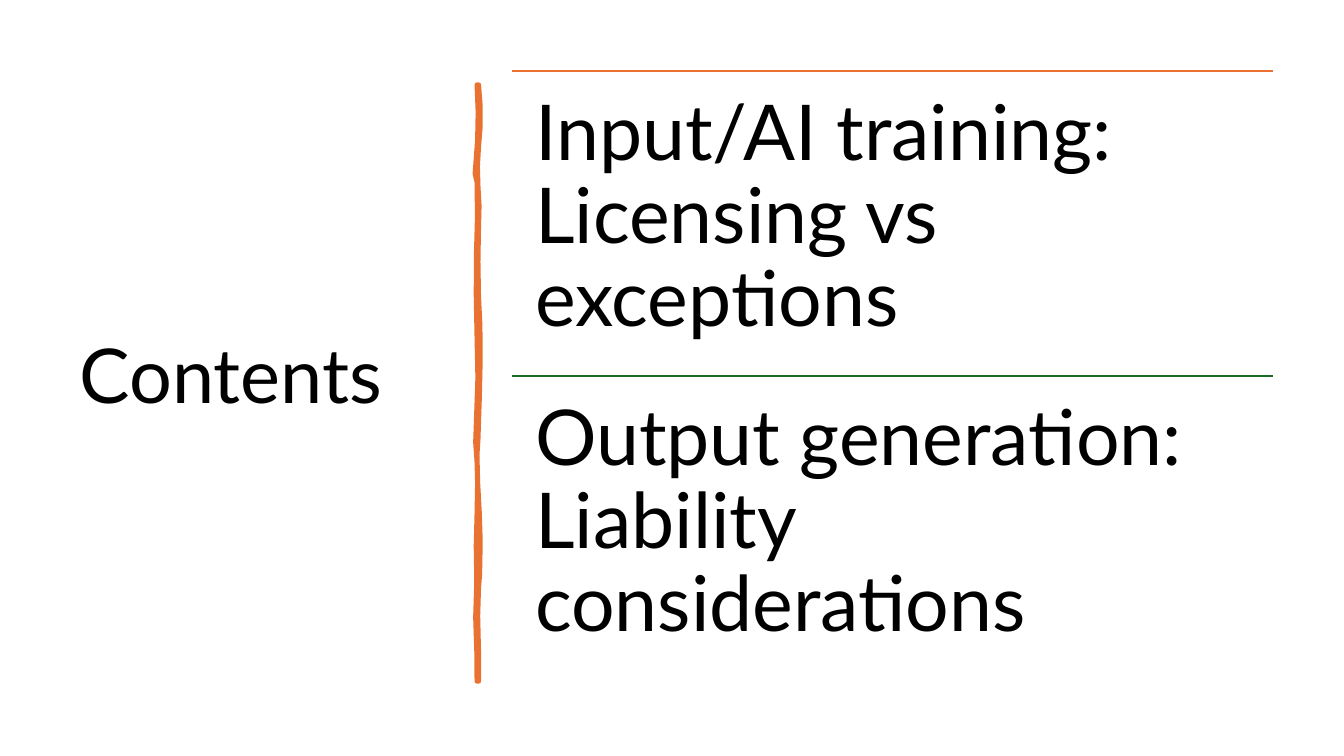
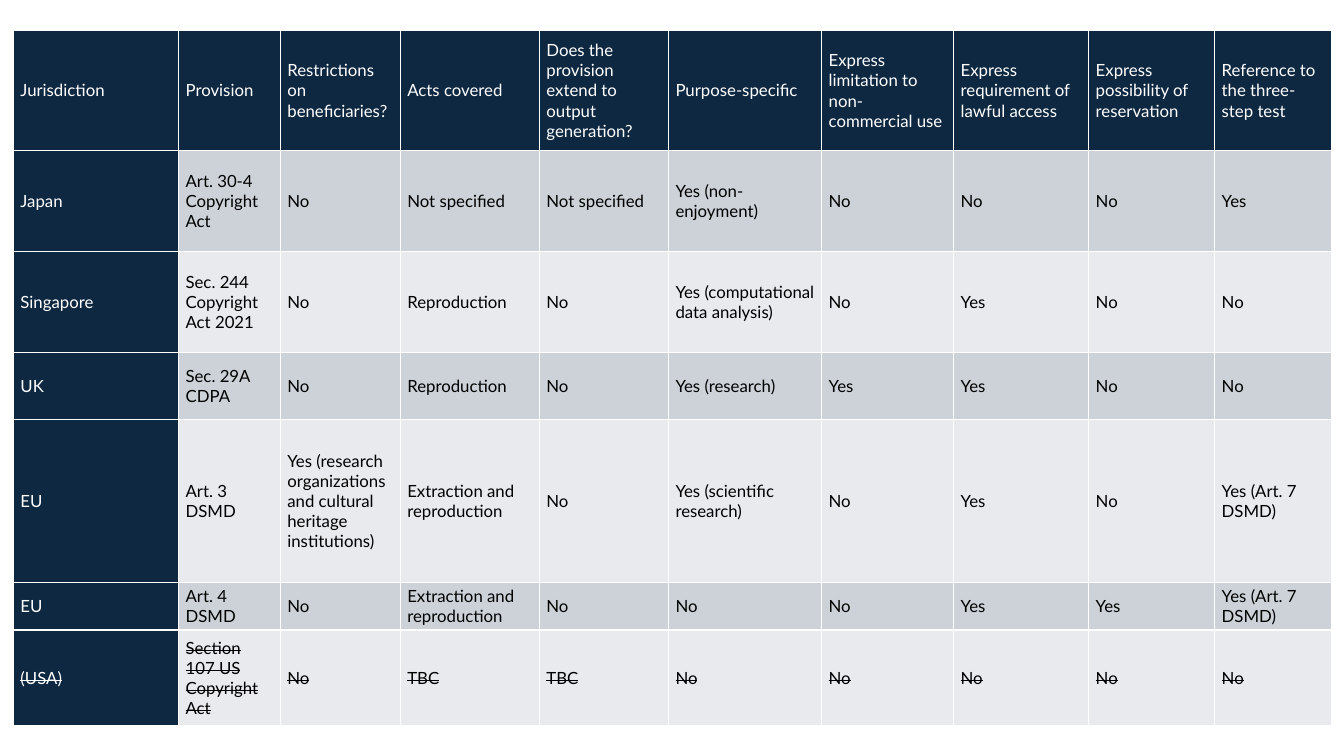
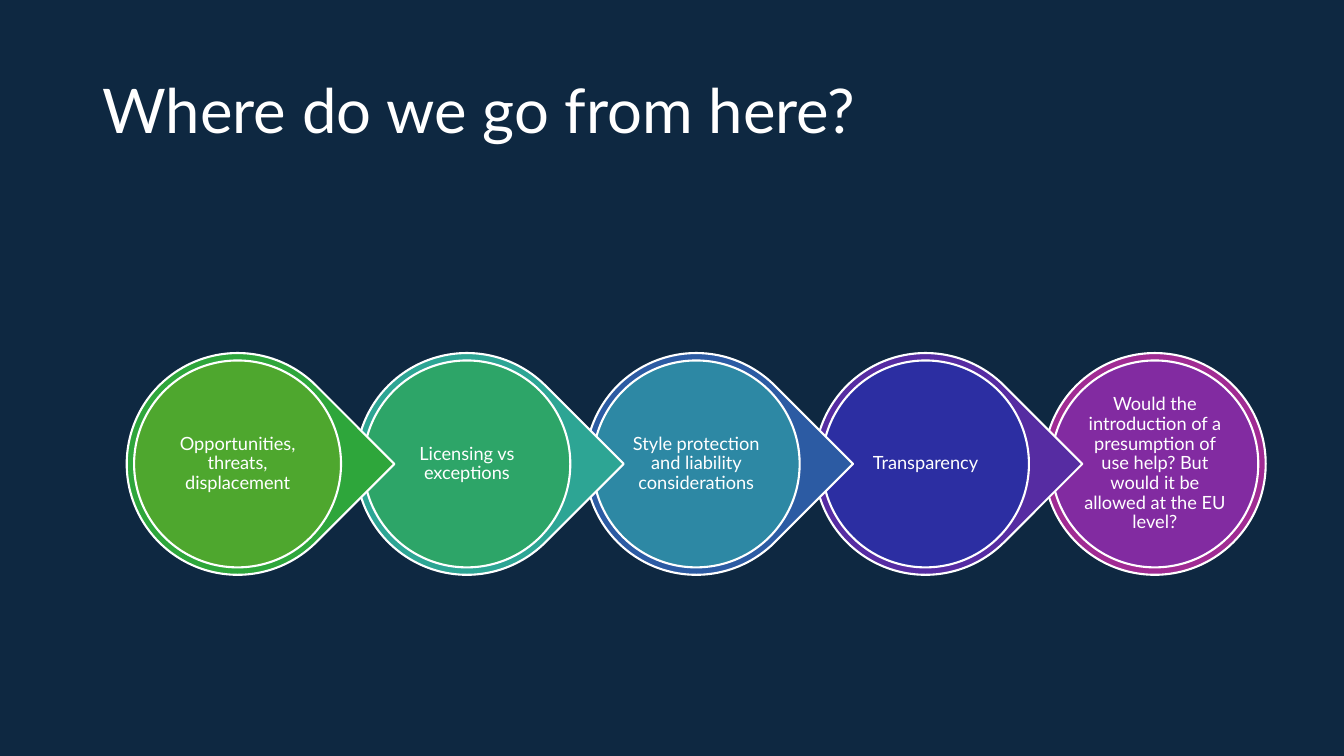
from lxml import etree
from pptx import Presentation
from pptx.dml.color import RGBColor
from pptx.enum.shapes import MSO_CONNECTOR, MSO_SHAPE
from pptx.enum.text import MSO_ANCHOR, MSO_AUTO_SIZE, PP_ALIGN
from pptx.oxml.ns import qn
from pptx.util import Pt

LINE = MSO_CONNECTOR.STRAIGHT
OVAL, DROP = MSO_SHAPE.OVAL, MSO_SHAPE.TEAR
TOP, MID = MSO_ANCHOR.TOP, MSO_ANCHOR.MIDDLE
LEFT, MIDDLE = PP_ALIGN.LEFT, PP_ALIGN.CENTER
FIXED = MSO_AUTO_SIZE.NONE

FONT = "Lato"
WHITE, BLACK, NAVY = "FFFFFF", "000000", "0E2841"
ORANGE, GREEN = "E97132", "196B24"
BANDS = ("CCD2D8", "E8EAED")
TITLE_ONLY, BLANK = 5, 6

# Outline of the brush stroke: (x, y) down the right edge, then up the left
STROKE = [
    (342, 60.5), (343.2, 76), (343.2, 90), (342, 105), (341.2, 119),
    (341.6, 133), (342.4, 147), (342, 162), (341.6, 187), (342, 212),
    (343, 232), (343.2, 256), (342.6, 284), (341.6, 314), (340.9, 325),
    (341.4, 345), (342.6, 367), (343.2, 387), (342.8, 410), (342, 420),
    (341.4, 440), (342, 465), (342, 486.7), (340.6, 486.7), (340.4, 465),
    (339.6, 441), (340.4, 415), (340, 390), (340.6, 367), (341, 345),
    (340.6, 330), (339.6, 316), (340.2, 299), (341.2, 270), (340.6, 241),
    (340, 210), (340.2, 180), (340.9, 155), (340.6, 130), (339.2, 124),
    (341, 100), (341.4, 80), (340.6, 60.5),
]

TOPICS = [
    ("Input/AI training: Licensing vs exceptions", ORANGE),
    ("Output generation: Liability considerations", GREEN),
]

COLS = [118, 72.7, 85.7, 99.4, 92.2, 109.4, 94.3, 96.5, 90, 83.5]
ROWS = [86, 72, 72, 48, 116.5, 34, 68.5]
LAWS = [line.split("|") for line in (
    "Jurisdiction|Provision|Restrictions on beneficiaries?|Acts covered|"
    "Does the provision extend to output generation?|Purpose-specific|"
    "Express limitation to non-commercial use|"
    "Express requirement of lawful access|"
    "Express possibility of reservation|Reference to the three-step test",
    "Japan|Art. 30-4 Copyright Act|No|Not specified|Not specified|"
    "Yes (non-enjoyment)|No|No|No|Yes",
    "Singapore|Sec. 244 Copyright Act 2021|No|Reproduction|No|"
    "Yes (computational data analysis)|No|Yes|No|No",
    "UK|Sec. 29A CDPA|No|Reproduction|No|Yes (research)|Yes|Yes|No|No",
    "EU|Art. 3 DSMD|"
    "Yes (research organizations and cultural heritage institutions)|"
    "Extraction and reproduction|No|Yes (scientific research)|"
    "No|Yes|No|Yes (Art. 7 DSMD)",
    "EU|Art. 4 DSMD|No|Extraction and reproduction|No|No|No|Yes|Yes|"
    "Yes (Art. 7 DSMD)",
    "(USA)|Section 107 US Copyright Act|No|TBC|TBC|No|No|No|No|No",
)]

STEPS = [
    ("Opportunities, threats, displacement", "2EA63B", "4EA72E"),
    ("Licensing vs exceptions", "2DA594", "2DA568"),
    ("Style protection and liability considerations", "2C5BA3", "2D88A4"),
    ("Transparency", "562CA2", "2C2EA2"),
    ("Would the introduction of a presumption of use help? "
     "But would it be allowed at the EU level?", "A02B93", "822BA1"),
]


def color(code):
    return RGBColor.from_string(code)


def apply(item, values):
    for name, value in values.items():
        setattr(item, name, value)


class Deck:
    def __init__(self):
        self.prs = Presentation()
        apply(self.prs, {"slide_width": Pt(960), "slide_height": Pt(540)})

    def add(self, layout, back=WHITE):
        self.slide = self.prs.slides.add_slide(self.prs.slide_layouts[layout])
        self.paint(self.slide.background, back)

    def paint(self, item, code):
        item.fill.solid()
        item.fill.fore_color.rgb = color(code)

    def edge(self, item, code, width):
        item.line.color.rgb = color(code)
        item.line.width = Pt(width)

    def label(self, frame, text, size, ink, align=LEFT, space=None):
        para = frame.paragraphs[0]
        apply(para, {"alignment": align, "line_spacing": space})
        run = para.add_run()
        run.text = text
        apply(run.font, {"name": FONT, "size": Pt(size)})
        run.font.color.rgb = color(ink)
        return run

    def title(self, text, box, size, ink):
        shape = self.slide.shapes.title
        apply(shape, dict(zip(("left", "top", "width", "height"),
                              map(Pt, box))))
        apply(shape.text_frame, {"vertical_anchor": MID, "word_wrap": True,
                                 "auto_size": FIXED})
        self.label(shape.text_frame, text, size, ink, space=0.9)

    def text(self, text, box, size, ink, inset, anchor=TOP, align=LEFT):
        frame = self.slide.shapes.add_textbox(*map(Pt, box)).text_frame
        sides = ("left", "top", "right", "bottom")
        apply(frame, {"margin_" + side: Pt(inset) for side in sides})
        apply(frame, {"word_wrap": True, "vertical_anchor": anchor})
        self.label(frame, text, size, ink, align, 0.9)

    def rule(self, left, top, width, code):
        ends = map(Pt, (left, top, left + width, top))
        line = self.slide.shapes.add_connector(LINE, *ends)
        self.edge(line, code, 1.5)
        etree.SubElement(line._element.spPr, qn("a:effectLst"))

    def shape(self, kind, box, code, turn=0):
        shape = self.slide.shapes.add_shape(kind, *map(Pt, box))
        shape.shadow.inherit = False
        shape.rotation = turn
        self.paint(shape, code)
        self.edge(shape, WHITE, 1.5)

    def stroke(self, points, code, width):
        dots = [(Pt(x), Pt(y)) for x, y in points]
        pen = self.slide.shapes.build_freeform(*dots[0])
        pen.add_line_segments(dots[1:], close=True)
        shape = pen.convert_to_shape()
        shape.shadow.inherit = False
        self.paint(shape, code)
        self.edge(shape, code, width)

    def frame(self, cell, code, width):
        """Draw the four cell borders; they must come before the fill."""
        props = cell._tc.get_or_add_tcPr()
        for tag in ("a:lnL", "a:lnR", "a:lnT", "a:lnB"):
            line = etree.SubElement(props, qn(tag), w=str(Pt(width)))
            fill = etree.SubElement(line, qn("a:solidFill"))
            etree.SubElement(fill, qn("a:srgbClr"), val=code)

    def cell(self, cell, text, fill, ink, struck):
        self.frame(cell, WHITE, 1)
        self.paint(cell, fill)
        apply(cell, {"margin_left": Pt(5), "margin_right": Pt(5),
                     "margin_top": 0, "margin_bottom": 0,
                     "vertical_anchor": MID})
        run = self.label(cell.text_frame, text, 12, ink)
        if struck:
            run._r.get_or_add_rPr().set("strike", "sngStrike")

    def table(self, data, left, top, cols, rows):
        box = map(Pt, (left, top, sum(cols), sum(rows)))
        table = self.slide.shapes.add_table(len(rows), len(cols), *box).table
        for col, width in zip(table.columns, cols):
            col.width = Pt(width)
        for r, (line, height) in enumerate(zip(data, rows)):
            table.rows[r].height = Pt(height)
            for c, text in enumerate(line):
                head = r == 0 or c == 0
                fill = NAVY if head else BANDS[(r - 1) % 2]
                self.cell(table.cell(r, c), text, fill,
                          WHITE if head else BLACK, r == len(rows) - 1)


def contents(deck):
    deck.add(TITLE_ONLY)
    deck.title("Contents", (49.7, 50.4, 269.3, 440), 54, BLACK)
    deck.stroke(STROKE, ORANGE, 3.25)
    left, width, height = 365.8, 543.6, 218.2
    for i, (text, code) in enumerate(TOPICS):
        top = 50.4 + i * height
        deck.rule(left, top, width, code)
        deck.text(text, (left, top, width, height), 55, BLACK, 16.5)


def laws(deck):
    deck.add(BLANK)
    deck.table(LAWS, 9.6, 21.6, COLS, ROWS)


def steps(deck):
    deck.add(TITLE_ONLY, NAVY)
    deck.title("Where do we go from here?", (66, 28.8, 828, 104.4), 44, WHITE)
    left, top, size, pitch = 90.5, 252.2, 158.4, 163.8

    def box(i, inset):
        side = size - 2 * inset
        return left + i * pitch + inset, top + inset, side, side

    last = len(STEPS) - 1
    for i, (text, rim, disc) in reversed(list(enumerate(STEPS))):
        kind, turn = (OVAL, 0) if i == last else (DROP, 45)
        deck.shape(kind, box(i, 0), rim, turn)
        deck.shape(OVAL, box(i, 5.3), disc)
        deck.text(text, box(i, 26.4), 13, WHITE, 1.4, MID, MIDDLE)


def main():
    deck = Deck()
    for build in (contents, laws, steps):
        build(deck)
    deck.prs.save("out.pptx")


if __name__ == "__main__":
    main()
